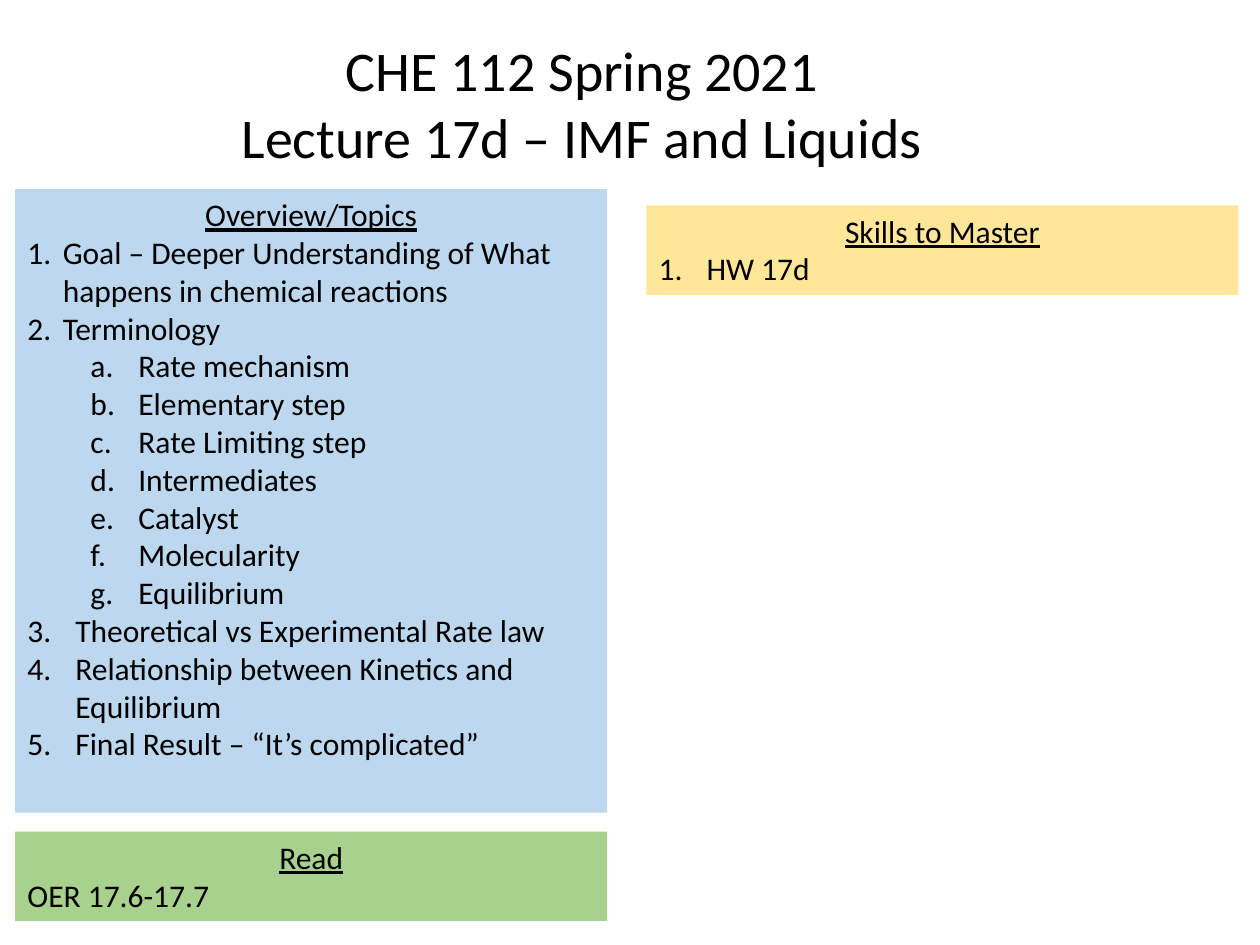
from lxml import etree
from pptx import Presentation
from pptx import util as u
from pptx.dml.color import RGBColor
from pptx.enum import text
from pptx.oxml.ns import qn

TITLE_BOX = (1.8, 0.23, 5.64, 1.18)
TITLE_LINES = ["CHE 112 Spring 2021", "Lecture 17d – IMF and Liquids"]

LIST_STYLES = {
    "plain": (0, 0, 0, None),
    "tight": (0, 0.28, 0.28, "arabicPeriod"),
    "number": (0, 0.38, 0.38, "arabicPeriod"),
    "letter": (1, 0.88, 0.38, "alphaLcPeriod"),
}

TERMS = ["Rate mechanism", "Elementary step", "Rate Limiting step", "Intermediates",
         "Catalyst", "Molecularity", "Equilibrium"]

PANELS = [
    ((0.12, 1.5, 4.7, 4.95), "BDD7EE", "Overview/Topics", [
        ("tight", "Goal – Deeper Understanding of What happens in chemical reactions"),
        ("tight", "Terminology"),
        *[("letter", term) for term in TERMS],
        ("number", "Theoretical vs Experimental Rate law"),
        ("number", "Relationship between Kinetics and Equilibrium"),
        ("number", "Final Result – “It’s complicated”"),
    ]),
    ((5.13, 1.63, 4.7, 0.71), "FFE699", "Skills to Master", [("number", "HW 17d")]),
    ((0.12, 6.6, 4.7, 0.71), "A9D18E", "Read", [("plain", "OER 17.6-17.7")]),
]


def color(value):
    return RGBColor.from_string(value)


def set_format(target, values):
    for name, value in values.items():
        setattr(target, name, value)


def place(shape, box):
    names = ("left", "top", "width", "height")
    set_format(shape, {name: u.Inches(length) for name, length in zip(names, box)})


def write(paragraph, words, size, underline=False, alignment=text.PP_ALIGN.LEFT):
    paragraph.alignment = alignment
    run = paragraph.add_run()
    run.text = words
    set_format(run.font, {"name": "Calibri", "size": u.Pt(size), "underline": underline})
    run.font.color.rgb = color("000000")


def format_list_item(paragraph, style):
    level, margin, hanging, numbering = LIST_STYLES[style]
    paragraph.level = level
    if numbering:
        properties = paragraph._p.get_or_add_pPr()
        properties.set("marL", str(u.Inches(margin)))
        properties.set("indent", str(-u.Inches(hanging)))
        etree.SubElement(properties, qn("a:buFont"), typeface="Calibri")
        etree.SubElement(properties, qn("a:buAutoNum"), type=numbering)


def add_title(slide, box):
    title = slide.shapes.title
    place(title, box)
    frame = title.text_frame
    set_format(frame, {"word_wrap": False, "auto_size": text.MSO_AUTO_SIZE.NONE,
                       "vertical_anchor": text.MSO_ANCHOR.TOP})
    for index, line in enumerate(TITLE_LINES):
        paragraph = frame.add_paragraph() if index else frame.paragraphs[0]
        write(paragraph, line, 32, alignment=text.PP_ALIGN.CENTER)


def add_panel(slide, box, fill, heading, items):
    panel = slide.shapes.add_textbox(*[u.Inches(length) for length in box])
    panel.fill.solid()
    panel.fill.fore_color.rgb = color(fill)
    frame = panel.text_frame
    set_format(frame, {"word_wrap": True, "auto_size": text.MSO_AUTO_SIZE.NONE,
                       "vertical_anchor": text.MSO_ANCHOR.TOP})
    write(frame.paragraphs[0], heading, 18, True, text.PP_ALIGN.CENTER)
    for style, words in items:
        paragraph = frame.add_paragraph()
        write(paragraph, words, 18)
        format_list_item(paragraph, style)


def main():
    presentation = Presentation()
    set_format(presentation, {"slide_width": u.Inches(10), "slide_height": u.Inches(7.5)})
    slide = presentation.slides.add_slide(presentation.slide_layouts.get_by_name("Title Only"))
    add_title(slide, TITLE_BOX)
    for panel in PANELS:
        add_panel(slide, *panel)
    presentation.save("out.pptx")


if __name__ == "__main__":
    main()
